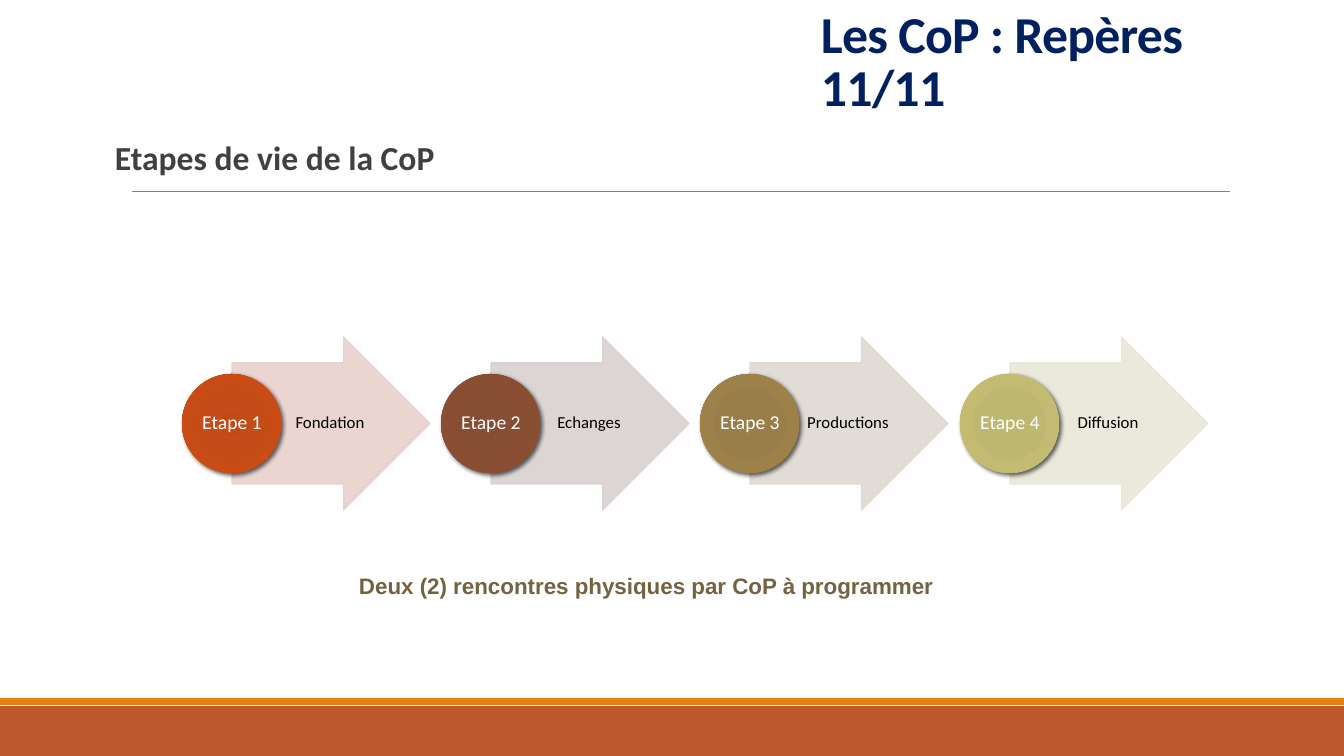
from lxml.etree import SubElement as Sub
from pptx import Presentation
from pptx.dml.color import RGBColor as RGB
from pptx.enum.shapes import MSO_CONNECTOR as Link, MSO_SHAPE as Shape
from pptx.enum.text import MSO_ANCHOR as Anchor, PP_ALIGN as Align
from pptx.oxml import parse_xml
from pptx.oxml.ns import nsdecls, qn
from pptx.util import Pt

SCALE = 12192000 / 1344
STEPS = [
    ("Etape 1", "Fondation", "E8D1CD", ("C44A15", "C34C18", "C94C15", "C45525")),
    ("Etape 2", "Echanges", "D9D1CF", ("874C32", "864E34", "8A4E33", "8A553D")),
    ("Etape 3", "Productions", "DED9D1", ("9A7D48", "9A7E4A", "9E8049", "9E8454")),
    ("Etape 4", "Diffusion", "E9E7D8", ("BEB76E", "BEB771", "C3BB71", "C5BF7D")),
]


def px(*nums):
    return [round(n * SCALE) for n in nums]


def paint(target, color):
    target.rgb = RGB.from_string(color)


def fade(fill, percent):
    """Make a solid fill partly transparent."""
    tone = fill._xPr.find(qn("a:solidFill"))[0]
    Sub(tone, qn("a:alpha"), val=str(percent * 1000))


class Deck:
    def __init__(self, font):
        self.font = font
        self.show = Presentation()
        self.show.slide_width, self.show.slide_height = px(1344, 756)
        self.items = self.show.slides.add_slide(self.show.slide_layouts[6]).shapes

    def shape(self, kind, box, color, edge=False, alpha=100):
        item = self.items.add_shape(kind, *px(*box))
        item.shadow.inherit = False
        item.fill.solid()
        paint(item.fill.fore_color, color)
        fade(item.fill, alpha)
        if edge:
            item.line.width = Pt(1)
            paint(item.line.color, color)
            fade(item.line.fill, alpha)
        else:
            item.line.fill.background()
        return item

    def disc(self, box, tones):
        """Draw a circle with a radial gradient and a soft shadow."""
        item = self.shape(Shape.OVAL, box, tones[0])
        props = item._element.spPr
        stops = "".join(
            f'<a:gs pos="{at}000"><a:srgbClr val="{tone}"/></a:gs>'
            for at, tone in zip((0, 34, 70, 100), tones))
        blend = parse_xml(
            f'<a:gradFill {nsdecls("a")} rotWithShape="1"><a:gsLst>{stops}</a:gsLst>'
            '<a:path path="circle"><a:fillToRect l="100000" t="100000" r="100000" '
            'b="100000"/></a:path></a:gradFill>')
        props.replace(props.find(qn("a:solidFill")), blend)
        shade = Sub(props.find(qn("a:effectLst")), qn("a:outerShdw"),
                    blurRad=str(Pt(3)), dist=str(Pt(2)), dir="2700000",
                    algn="ctr", rotWithShape="0")
        Sub(Sub(shade, qn("a:srgbClr"), val="000000"), qn("a:alpha"), val="60000")

    def line(self, start, end, color, width):
        item = self.items.add_connector(Link.STRAIGHT, *px(*start, *end))
        item.line.width = Pt(width)
        paint(item.line.color, color)
        Sub(item._element.spPr, qn("a:effectLst"))

    def text(self, words, box, size, color, bold=False, font=None, align=Align.LEFT,
             anchor=Anchor.TOP, pad=(0, 0, 0, 0), lead=1.0, track=0):
        """Add one paragraph; pad is left, top, right, bottom and track is in points."""
        frame = self.items.add_textbox(*px(*box)).text_frame
        frame.word_wrap = True
        frame.vertical_anchor = anchor
        (frame.margin_left, frame.margin_top,
         frame.margin_right, frame.margin_bottom) = px(*pad)
        para = frame.paragraphs[0]
        para.alignment = align
        para.line_spacing = lead
        run = para.add_run()
        run.text = words
        run.font.name = font or self.font
        run.font.size = Pt(size)
        run.font.bold = bold
        paint(run.font.color, color)
        if track:
            run._r.get_or_add_rPr().set("spc", str(round(track * 100)))

    def step(self, left, name, label, pale, tones):
        """Draw one stage: arrow, label, circle and stage name."""
        mid = dict(align=Align.CENTER, anchor=Anchor.MIDDLE, lead=0.9)
        arrow = self.shape(Shape.RIGHT_ARROW, (left + 50, 337, 198, 173), pale, True, 90)
        arrow.adjustments[0], arrow.adjustments[1] = 0.7, 0.5
        self.text(label, (left + 99, 363, 97, 121), 12, "000000", pad=(3, 1, 2, 1), **mid)
        self.disc((left, 374, 99, 99), tones)
        self.text(name, (left + 15, 388, 70, 70), 14, "FFFFFF", pad=(1, 1, 1, 1), **mid)


def main():
    deck = Deck("Calibri")
    deck.shape(Shape.RECTANGLE, (0, 706, 1344, 50), "BD582C")
    deck.shape(Shape.RECTANGLE, (0, 698, 1344, 7), "E48312")
    deck.line((132, 191), (1230, 191), "808080", 0.5)
    for i, stage in enumerate(STEPS):
        deck.step(182 + 778 * i // 3, *stage)
    deck.text("Deux (2) rencontres physiques par CoP à programmer", (355, 568, 603, 55),
              16, "746241", bold=True, font="Arial", pad=(4, 4, 4, 4))
    deck.text("Etapes de vie de la CoP", (105, 136, 392, 61), 24, "404040", bold=True,
              pad=(10, 5, 0, 5), lead=0.9)
    deck.text("Les CoP : Repères 11/11", (811, 52, 513, 70), 37, "002060", bold=True,
              anchor=Anchor.BOTTOM, pad=(10, 5, 30, 5), lead=0.85, track=-0.5)
    deck.show.save("out.pptx")


if __name__ == "__main__":
    main()
